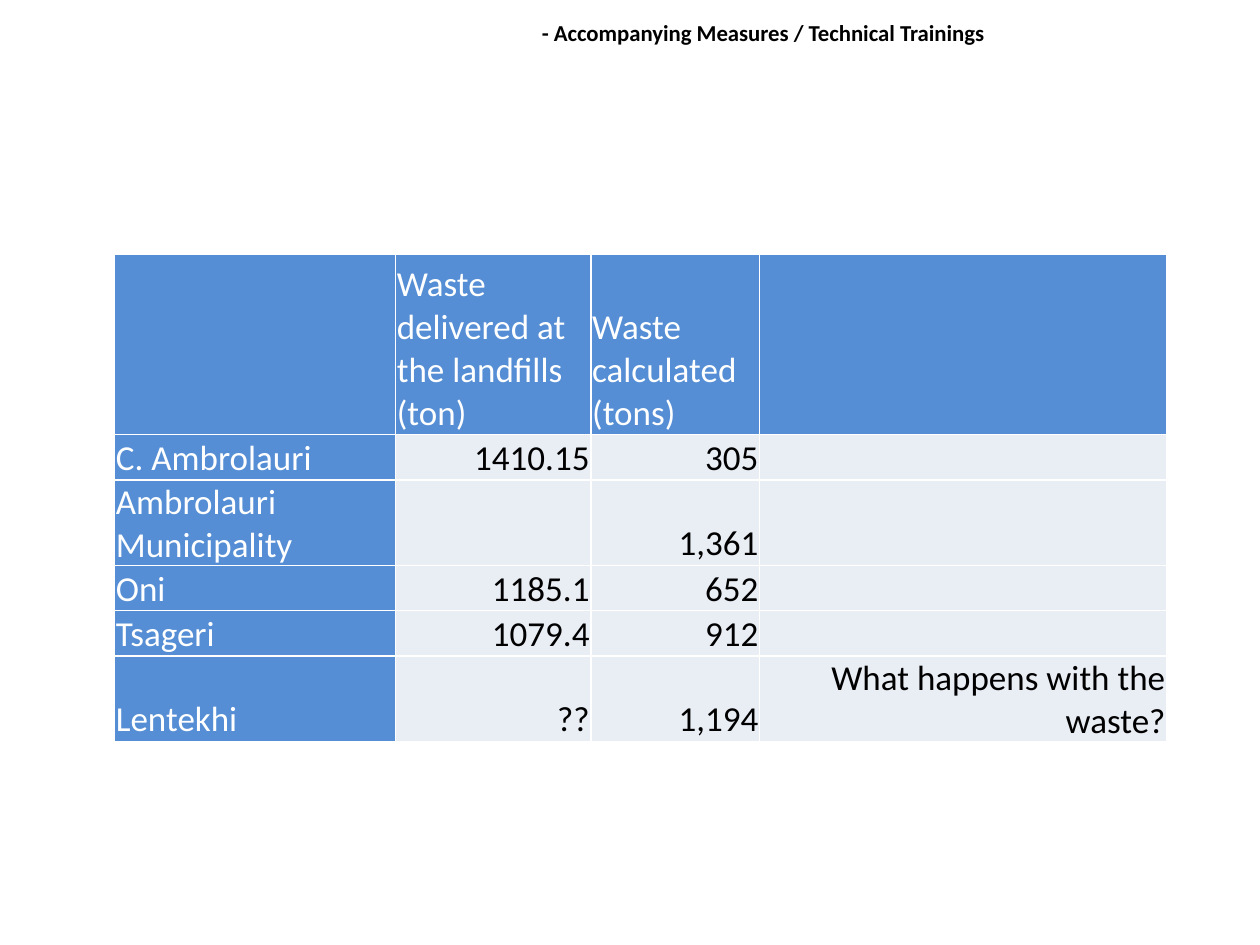
from lxml.etree import SubElement
from pptx import Presentation
from pptx.dml.color import RGBColor
from pptx.enum.text import MSO_ANCHOR, PP_ALIGN
from pptx.oxml.ns import qn
from pptx.util import Inches, Pt

WHITE = RGBColor(0xFF, 0xFF, 0xFF)
BLACK = RGBColor(0x00, 0x00, 0x00)
BLUE = RGBColor(0x55, 0x8E, 0xD5)
PALE = RGBColor(0xE9, 0xED, 0xF4)

COLUMN_WIDTHS = [2.23, 1.55, 1.34, 3.23]
ROW_HEIGHTS = [1.43] + [0.36] * 5
WASTE_ROWS = [
    ["", "Waste delivered at the landfills (ton)", "Waste calculated (tons)", ""],
    ["C. Ambrolauri", "1410.15", "305", ""],
    ["Ambrolauri Municipality", "", "1,361", ""],
    ["Oni", "1185.1", "652", ""],
    ["Tsageri", "1079.4", "912", ""],
    ["Lentekhi", "??", "1,194", "What happens with the waste?"],
]


def apply_format(target, values):
    """Set each named attribute of the target."""
    for name, value in values.items():
        setattr(target, name, value)


def write_text(para, text, size, color, bold=False):
    """Add one formatted span to a paragraph."""
    span = para.add_run()
    span.text = text
    apply_format(span.font, {"name": "Calibri", "size": Pt(size), "bold": bold})
    span.font.color.rgb = color


def add_borders(cell):
    """Draw a thin white line on every side of a cell."""
    properties = cell._tc.get_or_add_tcPr()
    for side in ("a:lnL", "a:lnR", "a:lnT", "a:lnB"):
        line = SubElement(properties, qn(side), w=str(Pt(1)))
        fill = SubElement(line, qn("a:solidFill"))
        SubElement(fill, qn("a:srgbClr"), val=str(WHITE))


def add_heading(page, left, top, width, height):
    """Place the heading in the given box."""
    box = page.shapes.add_textbox(left, top, width, height)
    box.fill.solid()
    box.fill.fore_color.rgb = WHITE
    inset = Inches(0.04)
    apply_format(box.text_frame, {
        "word_wrap": True, "margin_left": Inches(0.08), "margin_right": inset,
        "margin_top": inset, "margin_bottom": inset,
    })
    write_text(box.text_frame.paragraphs[0],
               "- Accompanying Measures / Technical Trainings", 13, BLACK, True)


def fill_cell(cell, text, is_header):
    """Style one cell and write its text."""
    inset = Inches(0.01)
    apply_format(cell, {
        "margin_left": inset, "margin_right": inset, "margin_top": inset,
        "margin_bottom": 0, "vertical_anchor": MSO_ANCHOR.BOTTOM,
    })
    add_borders(cell)
    cell.fill.solid()
    cell.fill.fore_color.rgb = BLUE if is_header else PALE
    para = cell.text_frame.paragraphs[0]
    para.alignment = PP_ALIGN.LEFT if is_header else PP_ALIGN.RIGHT
    if text:
        write_text(para, text, 20, WHITE if is_header else BLACK)


def add_waste_table(page, left, top, width, height):
    """Place the waste table in the given box."""
    frame = page.shapes.add_table(len(WASTE_ROWS), len(COLUMN_WIDTHS), left, top, width, height)
    table = frame.table
    apply_format(table, {"first_row": False, "horz_banding": False})
    for column, size in zip(table.columns, COLUMN_WIDTHS):
        column.width = Inches(size)
    for row, size in zip(table.rows, ROW_HEIGHTS):
        row.height = Inches(size)
    for row_index, texts in enumerate(WASTE_ROWS):
        for column_index, text in enumerate(texts):
            is_header = row_index == 0 or column_index == 0
            fill_cell(table.cell(row_index, column_index), text, is_header)


def main():
    """Build and save the deck."""
    deck = Presentation()
    apply_format(deck, {"slide_width": Inches(10), "slide_height": Inches(7.5)})
    page = deck.slides.add_slide(deck.slide_layouts[6])
    add_heading(page, Inches(4.22), Inches(0.11), Inches(3.98), Inches(0.31))
    add_waste_table(page, Inches(0.91), Inches(2.02),
                    Inches(sum(COLUMN_WIDTHS)), Inches(sum(ROW_HEIGHTS)))
    deck.save("out.pptx")


if __name__ == "__main__":
    main()
